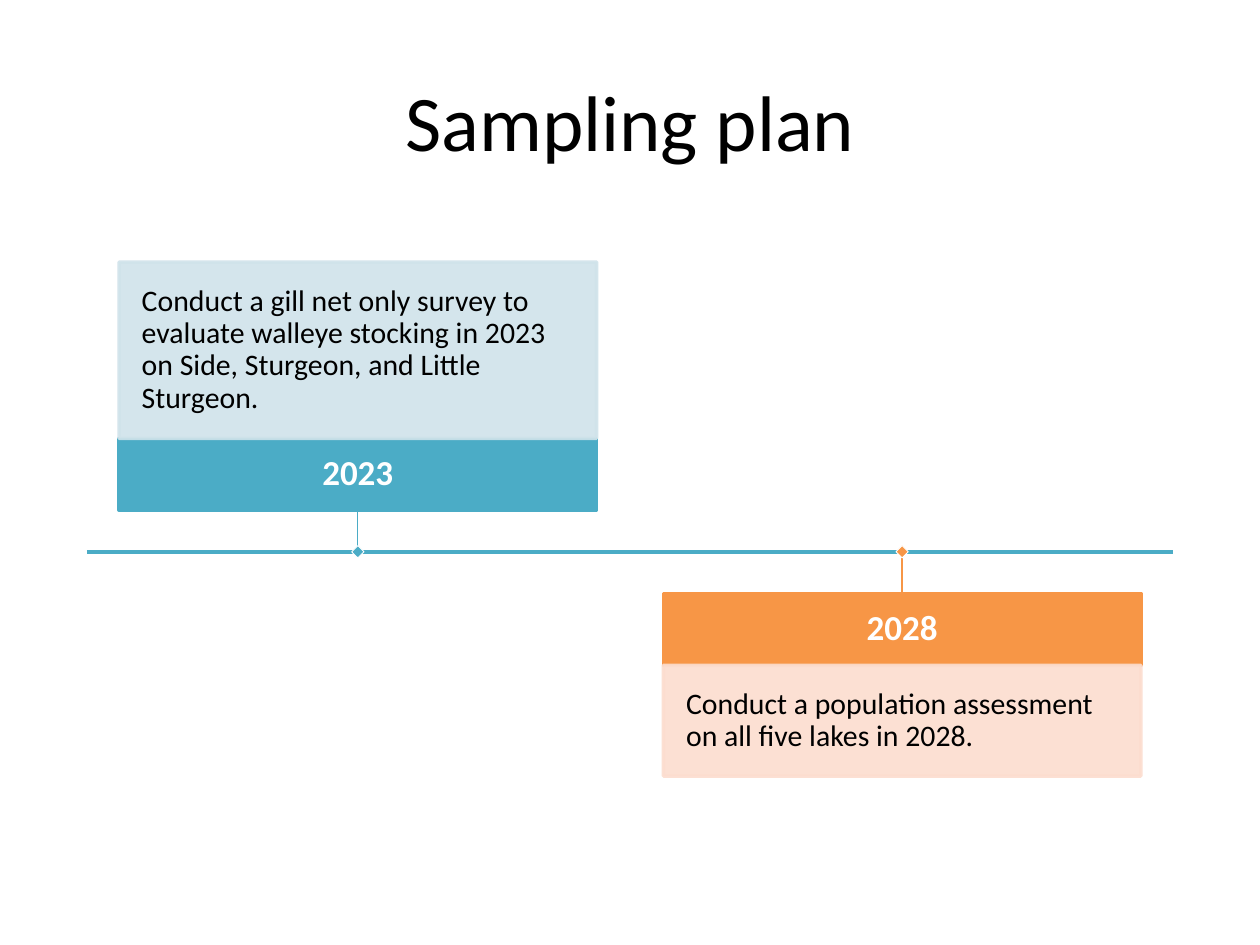
from dataclasses import dataclass

from lxml.etree import SubElement
from pptx import Presentation
from pptx.dml.color import RGBColor
from pptx.enum.shapes import MSO_CONNECTOR as Connector, MSO_SHAPE as Shape
from pptx.enum.text import MSO_ANCHOR as Anchor, PP_ALIGN as Align
from pptx.oxml.ns import qn
from pptx.util import Inches, Pt

COLORS = {
    "teal": "4BACC6",
    "pale_teal": "D0E3EA",
    "orange": "F79646",
    "pale_orange": "FCDDCF",
    "black": "000000",
    "white": "FFFFFF",
}
FONT = "Calibri"
AXIS_Y, AXIS_LEFT, AXIS_RIGHT = 4.38, 0.69, 9.31
CARD_WIDTH, YEAR_HEIGHT, STEM, MARKER = 3.79, 0.57, 0.33, 0.07


@dataclass
class Milestone:
    year: str
    text: str
    center: float
    text_height: float
    above: bool
    color: str
    pale: str


MILESTONES = [
    Milestone("2023", "Conduct a gill net only survey to evaluate walleye stocking "
              "in 2023 on Side, Sturgeon, and Little Sturgeon.",
              2.84, 1.4, True, "teal", "pale_teal"),
    Milestone("2028", "Conduct a population assessment on all five lakes in 2028.",
              7.16, 0.88, False, "orange", "pale_orange"),
]


def rgb(name: str) -> RGBColor:
    return RGBColor.from_string(COLORS[name])


def style_paragraph(paragraph, size: float, color: str, align, bold=False) -> None:
    paragraph.alignment = align
    paragraph.line_spacing = 0.9
    font = paragraph.font
    font.name, font.size, font.bold = FONT, Pt(size), bold
    font.color.rgb = rgb(color)


def add_line(slide, start: tuple, end: tuple, color: str, width: float) -> None:
    line = slide.shapes.add_connector(
        Connector.STRAIGHT, *(Inches(value) for value in (*start, *end)))
    line.line.color.rgb = rgb(color)
    line.line.width = Pt(width)
    SubElement(line._element.spPr, qn("a:effectLst"))


def add_box(slide, left: float, top: float, width: float, height: float,
            fill: str, outline: str, line_width: float):
    shape = slide.shapes.add_shape(
        Shape.RECTANGLE, *(Inches(value) for value in (left, top, width, height)))
    shape.shadow.inherit = False
    shape.fill.solid()
    shape.fill.fore_color.rgb = rgb(fill)
    shape.line.color.rgb = rgb(outline)
    shape.line.width = Pt(line_width)
    return shape


def set_text(shape, text: str, inset: float, size: float, color: str,
             align, bold=False) -> None:
    frame = shape.text_frame
    frame.word_wrap = True
    frame.vertical_anchor = Anchor.MIDDLE
    frame.margin_left = frame.margin_right = Inches(inset)
    frame.margin_top = frame.margin_bottom = Inches(inset)
    frame.text = text
    style_paragraph(frame.paragraphs[0], size, color, align, bold)


def make_translucent(shape, percent: int) -> None:
    for color in shape._element.spPr.iter(qn("a:srgbClr")):
        SubElement(color, qn("a:alpha"), val=str(percent * 1000))


def add_milestone(slide, item: Milestone) -> None:
    left = item.center - CARD_WIDTH / 2
    if item.above:
        stem_end = AXIS_Y - STEM
        year_top = stem_end - YEAR_HEIGHT
        text_top = year_top - item.text_height
    else:
        stem_end = year_top = AXIS_Y + STEM
        text_top = year_top + YEAR_HEIGHT

    year = add_box(slide, left, year_top, CARD_WIDTH, YEAR_HEIGHT,
                   item.color, item.color, 2)
    set_text(year, item.year, 0.11, 20, "white", Align.CENTER, bold=True)
    card = add_box(slide, left, text_top, CARD_WIDTH, item.text_height,
                   item.pale, item.pale, 2)
    make_translucent(card, 90)
    set_text(card, item.text, 0.18, 17, "black", Align.LEFT)
    add_line(slide, (item.center, AXIS_Y), (item.center, stem_end), item.color, 0.75)
    marker = add_box(slide, item.center - MARKER / 2, AXIS_Y - MARKER / 2,
                     MARKER, MARKER, item.color, "white", 0.5)
    marker.rotation = 45


def main() -> None:
    presentation = Presentation()
    presentation.slide_width, presentation.slide_height = Inches(10), Inches(7.5)
    slide = presentation.slides.add_slide(presentation.slide_layouts[5])

    # Title
    title = slide.shapes.title
    title.left, title.top = Inches(0.69), Inches(0.38)
    title.width, title.height = Inches(8.62), Inches(1.24)
    set_text(title, "Sampling plan", 0.05, 45, "black", Align.CENTER)

    # Time axis and milestones
    add_line(slide, (AXIS_LEFT, AXIS_Y), (AXIS_RIGHT, AXIS_Y), "teal", 2)
    for item in MILESTONES:
        add_milestone(slide, item)

    presentation.save("out.pptx")


if __name__ == "__main__":
    main()
